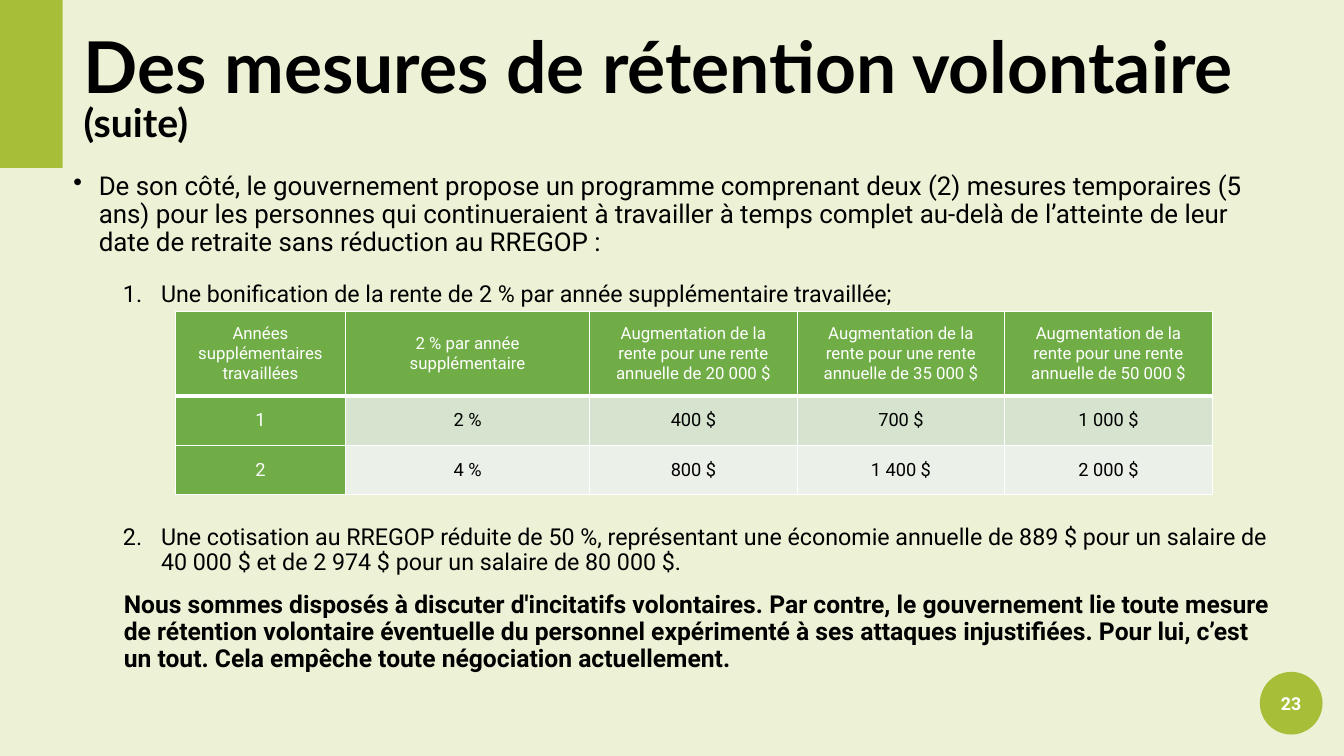
"""Build the slide on voluntary retention measures, with its pension table."""
from lxml import etree
from pptx import Presentation
from pptx import util as u
from pptx.dml.color import RGBColor
from pptx.enum import shapes, text
from pptx.oxml.ns import qn

COLORS = {
    "background": "EDF2D7",
    "lime": "A7BE39",
    "green": "70AD47",
    "band_dark": "D5E3CF",
    "band_light": "EBF1E9",
    "black": "000000",
    "white": "FFFFFF",
}


def color(name):
    return RGBColor.from_string(COLORS[name])


def style(paragraph, size, ink, font="Roboto", bold=False):
    for run in paragraph.runs:
        run.font.size = u.Pt(size)
        run.font.name = font
        run.font.bold = bold
        run.font.color.rgb = color(ink)


deck = Presentation()
deck.slide_width, deck.slide_height = u.Cm(33.87), u.Cm(19.05)
slide = deck.slides.add_slide(deck.slide_layouts[6])
slide.background.fill.solid()
slide.background.fill.fore_color.rgb = color("background")

corner = slide.shapes.add_shape(
    shapes.MSO_SHAPE.RECTANGLE, 0, 0, u.Cm(1.58), u.Cm(4.23))
page_badge = slide.shapes.add_shape(
    shapes.MSO_SHAPE.OVAL, u.Cm(31.75), u.Cm(16.93), u.Cm(1.58), u.Cm(1.58))
for accent in (corner, page_badge):
    accent.shadow.inherit = False
    accent.fill.solid()
    accent.fill.fore_color.rgb = color("lime")
    accent.line.fill.background()

page_number = page_badge.text_frame
page_number.margin_left = page_number.margin_right = u.Cm(0.1)
page_number.margin_top = page_number.margin_bottom = u.Cm(0.1)
page_number.vertical_anchor = text.MSO_ANCHOR.MIDDLE
page_number.text = "23"
page_number.paragraphs[0].alignment = text.PP_ALIGN.CENTER
style(page_number.paragraphs[0], 12.7, "white", bold=True)

title = slide.shapes.add_textbox(
    u.Cm(1.6), 0, u.Cm(30.94), u.Cm(4.23)).text_frame
title.word_wrap = True
title.vertical_anchor = text.MSO_ANCHOR.MIDDLE
title.margin_left, title.margin_top = u.Cm(0.51), u.Cm(0.41)
title.margin_right, title.margin_bottom = u.Cm(0.25), 0
title.text = "Des mesures de rétention volontaire "
heading = title.paragraphs[0]
heading.line_spacing = 0.8
suffix = heading.add_run()
suffix.text = "(suite)"
style(heading, 51, "black", "Lato", True)
suffix.font.size = u.Pt(28)

body = slide.shapes.add_textbox(
    u.Cm(1.6), u.Cm(4.23), u.Cm(30.94), u.Cm(13.39)).text_frame
body.word_wrap = True
BULLET = ("a:buChar", {"char": "•"})
FIRST = ("a:buAutoNum", {"type": "arabicPeriod"})
SECOND = ("a:buAutoNum", {"type": "arabicPeriod", "startAt": "2"})
points = [
    ("De son côté, le gouvernement propose un programme comprenant deux (2) "
     "mesures temporaires (5 ans) pour les personnes qui continueraient à "
     "travailler à temps complet au-delà de l’atteinte de leur date de "
     "retraite sans réduction au RREGOP :", 18.5, 0, 0.64, -0.64, BULLET),
    ("Une bonification de la rente de 2 % par année supplémentaire "
     "travaillée;", 16.6, 18, 2.21, -0.96, FIRST),
    ("Une cotisation au RREGOP réduite de 50 %, représentant une économie "
     "annuelle de 889 $ pour un salaire de 40 000 $ et de 2 974 $ pour un "
     "salaire de 80 000 $.", 16.6, 156, 2.21, -0.96, SECOND),
    ("Nous sommes disposés à discuter d'incitatifs volontaires. Par contre, "
     "le gouvernement lie toute mesure de rétention volontaire éventuelle du "
     "personnel expérimenté à ses attaques injustifiées. Pour lui, c’est un "
     "tout. Cela empêche toute négociation actuellement.",
     17.6, 12, 1.27, 0, None),
]
for index, (wording, size, gap, margin, indent, marker) in enumerate(points):
    point = body.add_paragraph() if index else body.paragraphs[0]
    point.text = wording
    point.line_spacing = 0.9
    point.space_before = u.Pt(gap)
    properties = point._p.get_or_add_pPr()
    properties.set("marL", str(u.Cm(margin)))
    properties.set("indent", str(u.Cm(indent)))
    if marker:
        tag, attributes = marker
        etree.SubElement(properties, qn(tag), attributes)
    style(point, size, "black", bold=marker is None)

increase = "Augmentation de la rente pour une rente annuelle de {} $"
rows = [
    ["Années supplémentaires\ntravaillées", "2 % par année\nsupplémentaire"]
    + [increase.format(pension) for pension in ("20 000", "35 000", "50 000")],
    ["1", "2 %", "400 $", "700 $", "1 000 $"],
    ["2", "4 %", "800 $", "1 400 $", "2 000 $"],
]
widths = [4.29, 6.15, 5.23, 5.23, 5.23]
heights = [2.13, 1.24, 1.24]
bands = ["green", "band_dark", "band_light"]
gains = slide.shapes.add_table(
    len(rows), len(widths), u.Cm(4.42), u.Cm(7.85),
    u.Cm(sum(widths)), u.Cm(sum(heights))).table
for column, width in zip(gains.columns, widths):
    column.width = u.Cm(width)
for r, values in enumerate(rows):
    gains.rows[r].height = u.Cm(heights[r])
    for c, value in enumerate(values):
        cell = gains.cell(r, c)
        cell.text = value
        cell.vertical_anchor = text.MSO_ANCHOR.MIDDLE
        is_header = r == 0 or c == 0
        cell.fill.solid()
        cell.fill.fore_color.rgb = color("green" if is_header else bands[r])
        for line in cell.text_frame.paragraphs:
            line.alignment = text.PP_ALIGN.CENTER
            style(line, 13 if r else 12, "white" if is_header else "black")
        for order, side in enumerate(("L", "R", "T", "B")):
            thick = (r, side) in ((0, "B"), (1, "T"))
            border = etree.Element(
                qn(f"a:ln{side}"), {"w": str(u.Pt(3 if thick else 1))})
            paint = etree.SubElement(border, qn("a:solidFill"))
            etree.SubElement(paint, qn("a:srgbClr"), {"val": COLORS["white"]})
            cell._tc.get_or_add_tcPr().insert(order, border)

deck.save("out.pptx")
